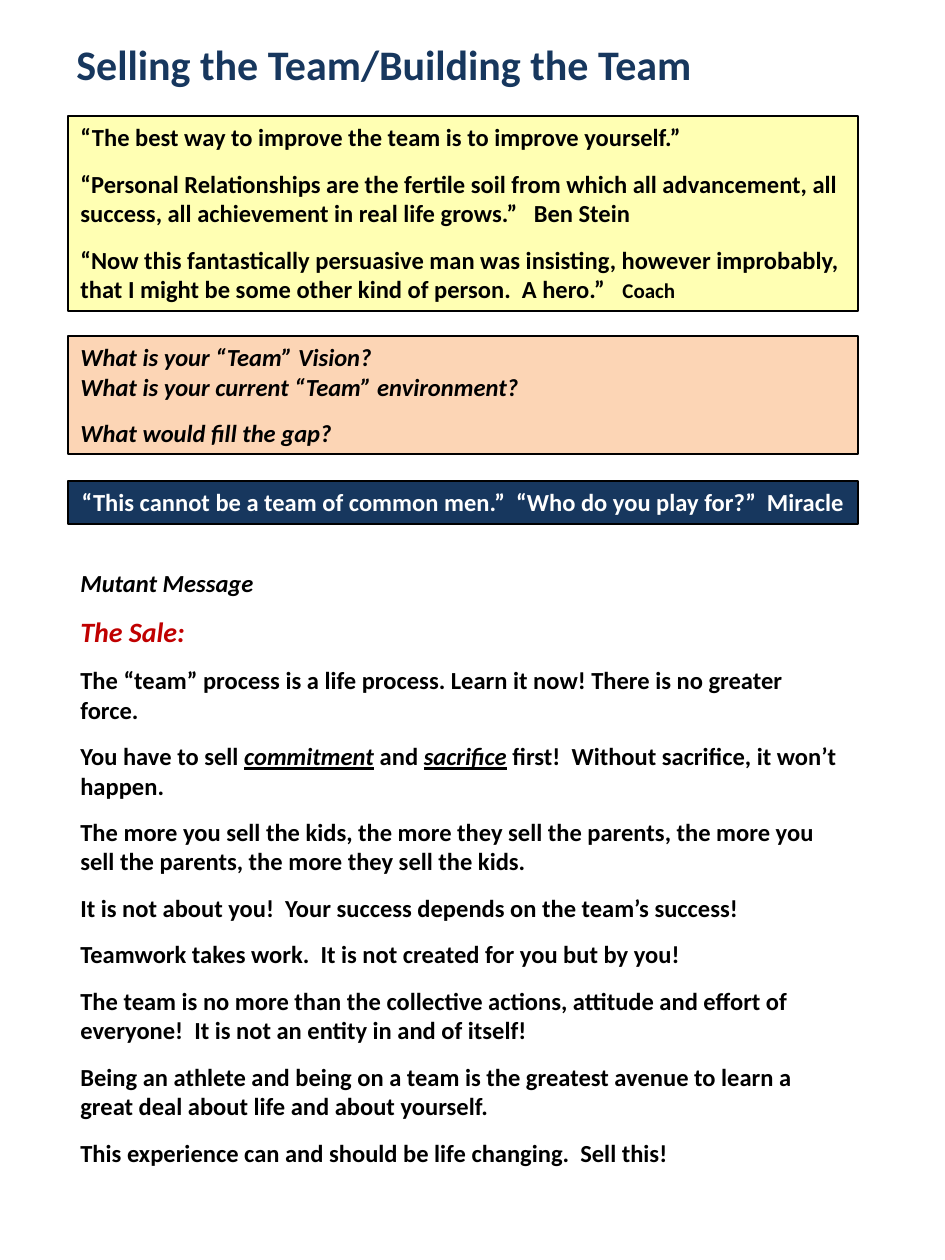
from pptx import Presentation
from pptx.dml.color import RGBColor as RGB
from pptx.enum.shapes import MSO_SHAPE as Shape
from pptx.enum.text import MSO_ANCHOR as Anchor, PP_ALIGN as Align
from pptx.util import Emu, Pt

PX = 914400 / 126
NAVY = RGB(0x17, 0x37, 0x5E)
YELLOW = RGB(0xFF, 0xFF, 0xB3)
PEACH = RGB(0xFC, 0xD5, 0xB5)
RED = RGB(0xC0, 0x00, 0x00)
BLACK = RGB(0x00, 0x00, 0x00)
WHITE = RGB(0xFF, 0xFF, 0xFF)

LEFT = 68
BOX_WIDTH = 790


def px(length):
    return Emu(round(length * PX))


class Handout:
    font = "Calibri"
    size = 14
    gap = 9.76

    def __init__(self, slide):
        self.slide = slide

    def text(self, left, top, width, height):
        frame = self.slide.shapes.add_textbox(*map(px, (left, top, width, height))).text_frame
        frame.word_wrap = True
        return frame

    def box(self, top, height, fill):
        panel = self.slide.shapes.add_shape(
            Shape.RECTANGLE, *map(px, (LEFT, top, BOX_WIDTH, height)))
        panel.shadow.inherit = False
        panel.fill.solid()
        panel.fill.fore_color.rgb = fill
        panel.line.color.rgb = BLACK
        panel.line.width = Pt(1.5)
        frame = panel.text_frame
        frame.word_wrap = True
        frame.vertical_anchor = Anchor.TOP
        return frame

    def say(self, frame, *parts, size=size, color=BLACK, italic=False,
            gap=gap, align=Align.LEFT):
        first = frame.paragraphs[0]
        fresh = not first.runs
        paragraph = first if fresh else frame.add_paragraph()
        paragraph.alignment = align
        paragraph.space_before = Pt(0 if fresh else gap)
        font = paragraph.font
        font.name, font.size, font.bold, font.italic = self.font, Pt(size), True, italic
        font.color.rgb = color
        for part in parts:
            paragraph.add_run().text = part
        return paragraph.runs


def main():
    deck = Presentation()
    deck.slide_width, deck.slide_height = px(945), px(1260)
    page = Handout(deck.slides.add_slide(deck.slide_layouts[6]))

    title = page.text(64, 32, 693, 63)
    page.say(title, "Selling the Team/Building the Team", size=24, color=NAVY)

    quotes = page.box(116, 195, YELLOW)
    page.say(quotes, "“The best way to improve the team is to improve yourself.”")
    page.say(quotes, "“Personal Relationships are the fertile soil from which all advancement, "
             "all success, all achievement in real life grows.”   Ben Stein")
    credit = page.say(
        quotes, "“Now this fantastically persuasive man was insisting, however improbably, "
        "that I might be some other kind of person.  A hero.”   ", "Coach")[-1]
    credit.font.size = Pt(12)

    questions = page.box(336, 118, PEACH)
    page.say(questions, "What is your “Team” Vision?", italic=True)
    page.say(questions, "What is your current “Team” environment?", italic=True, gap=0)
    page.say(questions, "What would fill the gap?", italic=True)

    sale = page.text(LEFT, 562, 784, 615)
    page.say(sale, "Mutant Message", italic=True)
    page.say(sale, "The Sale:", size=16, color=RED, italic=True)
    page.say(sale, "The “team” process is a life process. Learn it now! "
             "There is no greater force.")
    pitch = page.say(sale, "You have to sell ", "commitment", " and ", "sacrifice",
                     " first!  Without sacrifice, it won’t happen.")
    for stressed in pitch[1::2]:
        stressed.font.italic = stressed.font.underline = True
    for point in (
        "The more you sell the kids, the more they sell the parents, "
        "the more you sell the parents, the more they sell the kids.",
        "It is not about you!  Your success depends on the team’s success!",
        "Teamwork takes work.  It is not created for you but by you!",
        "The team is no more than the collective actions, attitude and effort of everyone!  "
        "It is not an entity in and of itself!",
        "Being an athlete and being on a team is the greatest avenue to learn "
        "a great deal about life and about yourself.",
        "This experience can and should be life changing.  Sell this!",
    ):
        page.say(sale, point)

    motto = page.box(481, 43, NAVY)
    page.say(motto, "“This cannot be a team of common men.”  “Who do you play for?”  Miracle",
             color=WHITE, align=Align.CENTER)

    deck.save("out.pptx")


if __name__ == "__main__":
    main()
